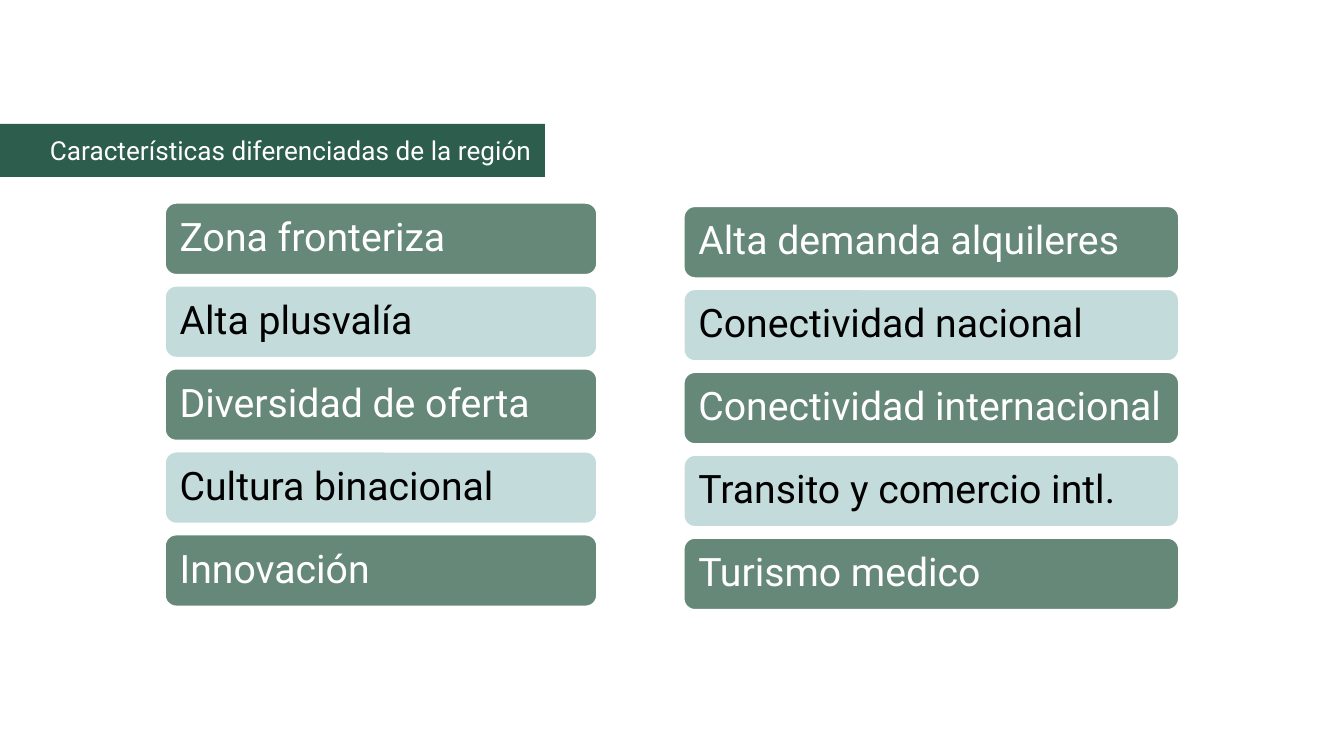
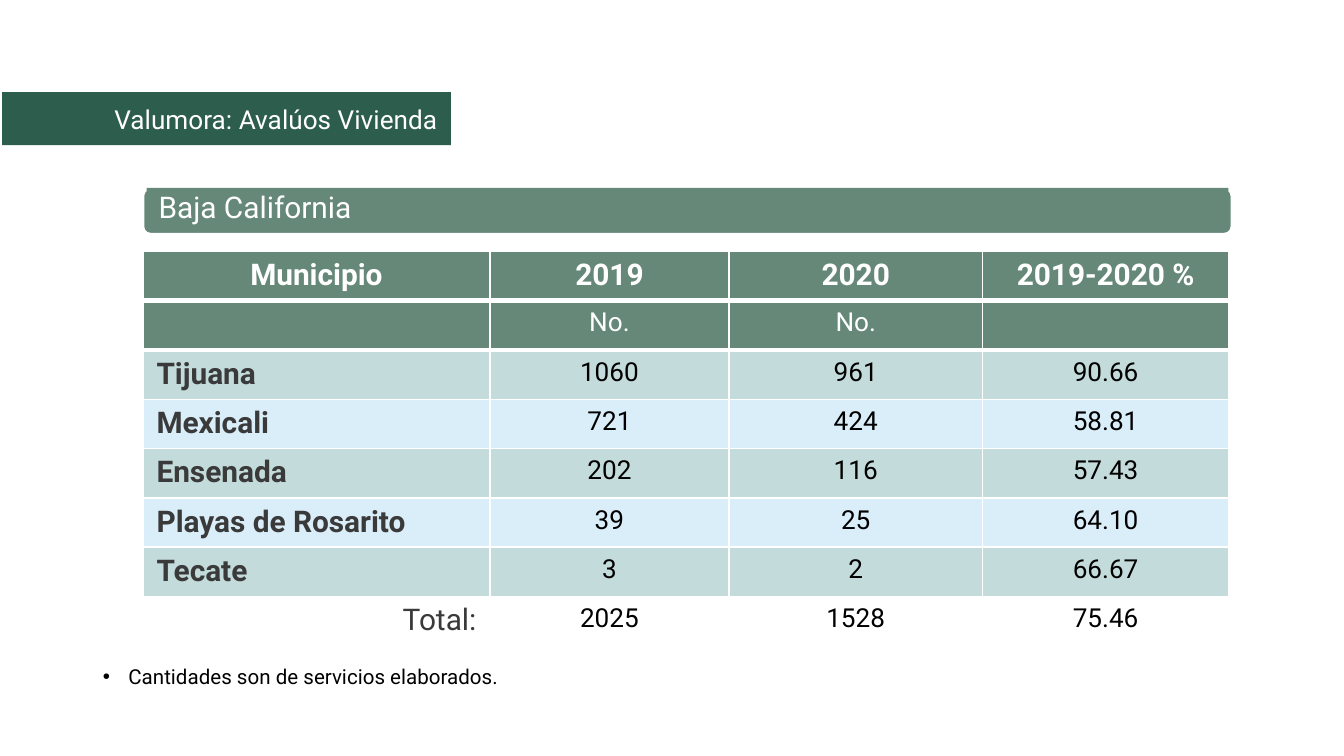
"""Builds two slides on the regional housing market of Baja California."""
from lxml import etree
from pptx import Presentation
from pptx.dml.color import RGBColor
from pptx.enum.shapes import MSO_SHAPE
from pptx.enum.text import MSO_ANCHOR, MSO_AUTO_SIZE, PP_ALIGN
from pptx.oxml.ns import qn
from pptx.util import Inches, Pt

ROUNDED, RECTANGLE = MSO_SHAPE.ROUNDED_RECTANGLE, MSO_SHAPE.RECTANGLE
MIDDLE, TOP = MSO_ANCHOR.MIDDLE, MSO_ANCHOR.TOP
LEFT, CENTER, RIGHT = PP_ALIGN.LEFT, PP_ALIGN.CENTER, PP_ALIGN.RIGHT
NO_AUTOFIT = MSO_AUTO_SIZE.NONE

FONT = "Roboto"
DARK_GREEN = RGBColor(0x2D, 0x5D, 0x4D)
GREEN = RGBColor(0x66, 0x88, 0x78)
PALE_GREEN = RGBColor(0xC3, 0xDB, 0xDA)
PALE_BLUE = RGBColor(0xDA, 0xEE, 0xFA)
WHITE = RGBColor(0xFF, 0xFF, 0xFF)
BLACK = RGBColor(0x00, 0x00, 0x00)
GRAY = RGBColor(0x3A, 0x3A, 0x3A)

presentation = Presentation()
presentation.slide_width = Inches(10)
presentation.slide_height = presentation.slide_width * 9 // 16
COLUMN = presentation.slide_width / 100
ROW = presentation.slide_height / 100


def grid(left, top, width, height):
    return int(left * COLUMN), int(top * ROW), int(width * COLUMN), int(height * ROW)


def format_paragraph(paragraph, text, size, color, alignment=LEFT, bold=False):
    paragraph.text = text
    paragraph.alignment = alignment
    paragraph.font.name = FONT
    paragraph.font.size = Pt(size)
    paragraph.font.bold = bold
    paragraph.font.color.rgb = color


TITLES = [
    (5, "Características diferenciadas de la región", (0, 16.4, 40.55, 7)),
    (1, "Valumora: Avalúos Vivienda", (0.15, 12.2, 33.4, 7)),
]
for layout_index, title_text, title_box in TITLES:
    slide = presentation.slides.add_slide(presentation.slide_layouts[layout_index])
    title = slide.shapes.title
    title.left, title.top, title.width, title.height = grid(*title_box)
    title.fill.solid()
    title.fill.fore_color.rgb = DARK_GREEN
    title.text_frame.auto_size = NO_AUTOFIT
    title.text_frame.vertical_anchor = MIDDLE
    format_paragraph(title.text_frame.paragraphs[0], title_text, 14, WHITE, RIGHT)
features_slide, appraisals_slide = presentation.slides

FEATURE_PITCH = 10.97
FEATURE_LISTS = [
    (12.2, 26.7, 32.3, ["Zona fronteriza", "Alta plusvalía", "Diversidad de oferta",
                        "Cultura binacional", "Innovación"]),
    (50.8, 27.15, 37, ["Alta demanda alquileres", "Conectividad nacional",
                       "Conectividad internacional", "Transito y comercio intl.",
                       "Turismo medico"]),
]
bars = []
for left, top, width, features in FEATURE_LISTS:
    for index, feature in enumerate(features):
        fill, color = [(GREEN, WHITE), (PALE_GREEN, BLACK)][index % 2]
        box = (left, top + index * FEATURE_PITCH, width, 9.78)
        bars.append((features_slide, ROUNDED, box, fill, feature, 21, color))
bars += [
    (appraisals_slide, ROUNDED, (10.6, 24.85, 81.1, 6.2), GREEN, "", 16, WHITE),
    (appraisals_slide, RECTANGLE, (10.9, 24.85, 80.5, 5.5), GREEN, "Baja California", 16, WHITE),
]
for slide, outline, box, fill, text, size, color in bars:
    bar = slide.shapes.add_shape(outline, *grid(*box))
    bar.shadow.inherit = False
    bar.fill.solid()
    bar.fill.fore_color.rgb = fill
    if outline == ROUNDED:
        bar.line.color.rgb = WHITE
        bar.line.width = Pt(2)
    else:
        bar.line.fill.background()
    if text:
        frame = bar.text_frame
        frame.word_wrap = True
        frame.vertical_anchor = MIDDLE
        frame.margin_left = frame.margin_top = frame.margin_bottom = Inches(0.09)
        frame.margin_right = Inches(0.05)
        format_paragraph(frame.paragraphs[0], text, size, color)
        frame.paragraphs[0].line_spacing = 0.9

APPRAISALS = [
    ("Municipio", "2019", "2020", "2019-2020 %"),
    ("", "No.", "No.", ""),
    ("Tijuana", "1060", "961", "90.66"),
    ("Mexicali", "721", "424", "58.81"),
    ("Ensenada", "202", "116", "57.43"),
    ("Playas de Rosarito", "39", "25", "64.10"),
    ("Tecate", "3", "2", "66.67"),
    ("Total:", "2025", "1528", "75.46"),
]
TOTAL_ROW = len(APPRAISALS) - 1
HEADER_BORDERS = {0: "a:lnB", 1: "a:lnT"}
table = appraisals_slide.shapes.add_table(
    len(APPRAISALS), 4, *grid(10.65, 33.25, 80.8, 52.2)).table
for column, width in zip(table.columns, (25.8, 17.8, 18.85, 18.35)):
    column.width = int(width * COLUMN)

for row_index, values in enumerate(APPRAISALS):
    is_header = row_index < 2
    for column_index, value in enumerate(values):
        cell = table.cell(row_index, column_index)
        is_label = column_index == 0 and not is_header
        if row_index == TOTAL_ROW:
            cell.fill.background()
        else:
            cell.fill.solid()
            band = [PALE_GREEN, PALE_BLUE][row_index % 2]
            cell.fill.fore_color.rgb = GREEN if is_header else band
        if is_header:
            border = etree.Element(qn(HEADER_BORDERS[row_index]), w=str(Pt(3)))
            border_fill = etree.SubElement(border, qn("a:solidFill"))
            etree.SubElement(border_fill, qn("a:srgbClr"), val=str(WHITE))
            cell._tc.get_or_add_tcPr().insert(0, border)
        alignment = CENTER
        if is_label:
            alignment = RIGHT if row_index == TOTAL_ROW else LEFT
        format_paragraph(
            cell.text_frame.paragraphs[0], value,
            size=16 if is_label or row_index == 0 else 14,
            color=WHITE if is_header else GRAY if is_label else BLACK,
            alignment=alignment,
            bold=row_index == 0 or (is_label and row_index < TOTAL_ROW))

note = appraisals_slide.placeholders[1]
note.left, note.top, note.width, note.height = grid(6.65, 86.95, 35.4, 5.2)
note.text_frame.auto_size = NO_AUTOFIT
note.text_frame.vertical_anchor = TOP
note_paragraph = note.text_frame.paragraphs[0]
format_paragraph(note_paragraph, "Cantidades son de servicios elaborados.", 11, BLACK)
note_paragraph.space_before = Pt(0)
note_properties = note_paragraph._p.get_or_add_pPr()
note_properties.set("marL", str(Inches(0.19)))
note_properties.set("indent", str(-Inches(0.19)))

presentation.save("out.pptx")
